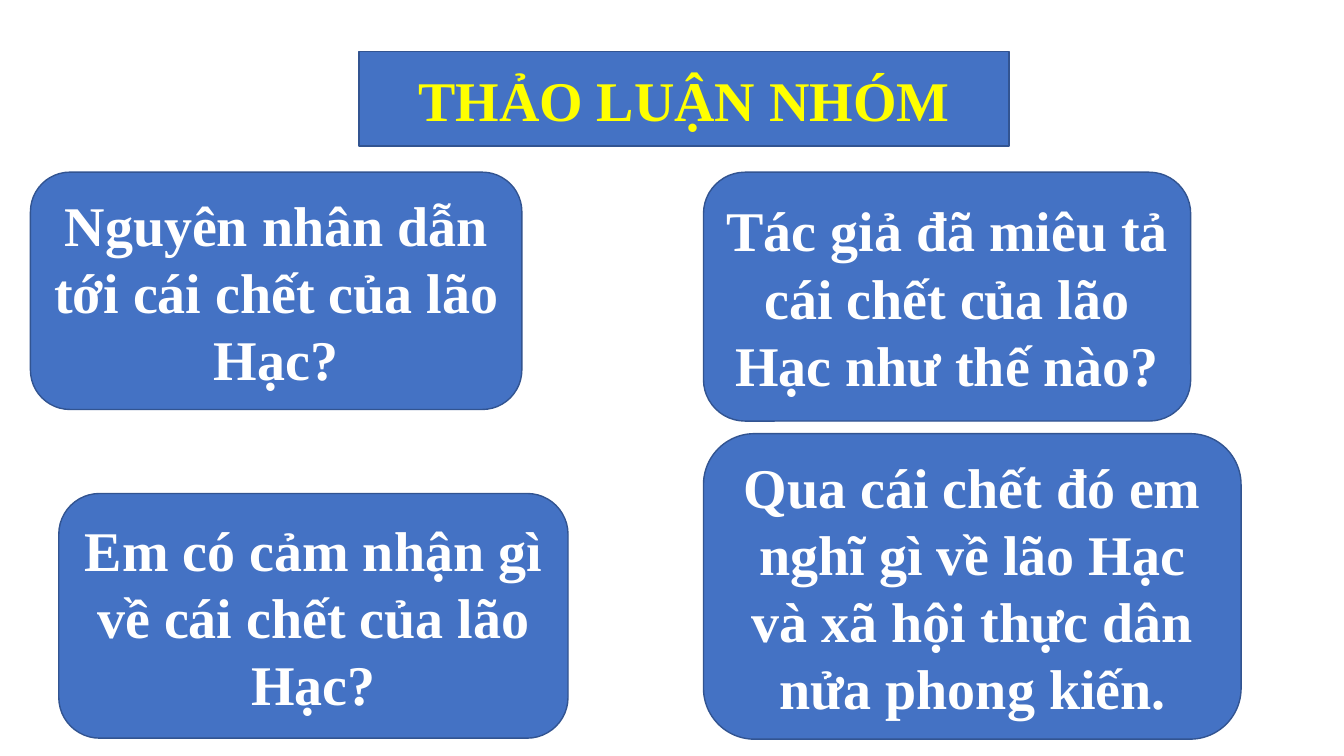
from pptx import Presentation
from pptx.dml.color import RGBColor
from pptx.enum.shapes import MSO_SHAPE as Shape
from pptx.enum.text import MSO_ANCHOR as Anchor, PP_ALIGN as Align
from pptx.util import Pt

PX = 9525
SLIDE_SIZE = (1280, 720)
BLUE, NAVY, YELLOW, WHITE = "4472C4", "325491", "FFFF00", "FFFFFF"
TEXT_FORMAT = {"name": "Times New Roman", "size": Pt(40), "bold": True}

HEADING = ("THẢO LUẬN NHÓM", (342, 49, 619, 90))
QUESTIONS = [
    ("Nguyên nhân dẫn tới cái chết của lão Hạc?",
     Shape.ROUNDED_RECTANGLE, (29, 164, 468, 226)),
    ("Tác giả đã miêu tả cái chết của lão Hạc như thế nào?",
     Shape.ROUNDED_RECTANGLE, (670, 164, 464, 237)),
    ("Em có cảm nhận gì về cái chết của lão Hạc?",
     Shape.FLOWCHART_ALTERNATE_PROCESS, (56, 470, 485, 233)),
    ("Qua cái chết đó em nghĩ gì về lão Hạc và xã hội thực dân nửa phong kiến.",
     Shape.ROUNDED_RECTANGLE, (670, 413, 512, 291)),
]


def paint(color_format, hex_color):
    color_format.rgb = RGBColor.from_string(hex_color)


def add_panel(slide, outline, box, wording, text_color):
    panel = slide.shapes.add_shape(outline, *(length * PX for length in box))
    panel.shadow.inherit = False
    panel.fill.solid()
    paint(panel.fill.fore_color, BLUE)
    paint(panel.line.color, NAVY)
    panel.line.width = Pt(1)
    frame = panel.text_frame
    frame.word_wrap = True
    frame.vertical_anchor = Anchor.MIDDLE
    paragraph = frame.paragraphs[0]
    paragraph.alignment = Align.CENTER
    run = paragraph.add_run()
    run.text = wording
    for attribute, value in TEXT_FORMAT.items():
        setattr(run.font, attribute, value)
    paint(run.font.color, text_color)


def add_heading(slide, wording, box):
    add_panel(slide, Shape.RECTANGLE, box, wording, YELLOW)


def add_questions(slide, questions):
    for wording, outline, box in questions:
        add_panel(slide, outline, box, wording, WHITE)


def main():
    deck = Presentation()
    deck.slide_width, deck.slide_height = (length * PX for length in SLIDE_SIZE)
    slide = deck.slides.add_slide(deck.slide_layouts[6])
    add_heading(slide, *HEADING)
    add_questions(slide, QUESTIONS)
    deck.save("out.pptx")


if __name__ == "__main__":
    main()
